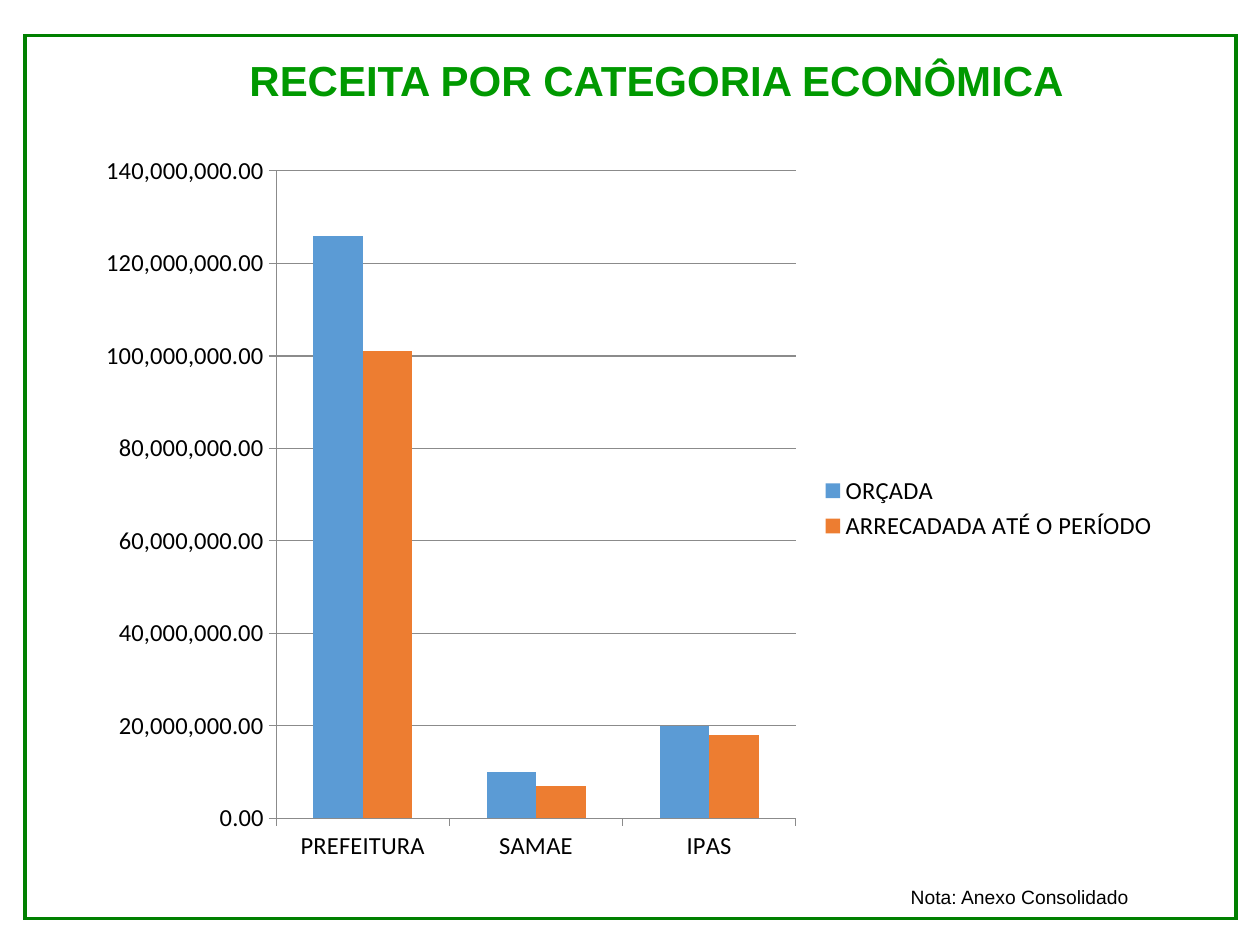
from dataclasses import dataclass

from lxml import etree
from pptx import Presentation
from pptx.chart.data import CategoryChartData
from pptx.dml.color import RGBColor
from pptx.enum.chart import XL_CHART_TYPE, XL_LEGEND_POSITION, XL_TICK_MARK
from pptx.enum.shapes import MSO_SHAPE
from pptx.enum.text import MSO_ANCHOR, PP_ALIGN
from pptx.oxml.ns import qn
from pptx.util import Inches, Pt

COLUMNS = XL_CHART_TYPE.COLUMN_CLUSTERED
LEGEND_RIGHT = XL_LEGEND_POSITION.RIGHT
TICK_OUTSIDE = XL_TICK_MARK.OUTSIDE
RECTANGLE = MSO_SHAPE.RECTANGLE
TOP, MIDDLE = MSO_ANCHOR.TOP, MSO_ANCHOR.MIDDLE
LEFT, CENTER = PP_ALIGN.LEFT, PP_ALIGN.CENTER


@dataclass(frozen=True)
class Theme:
    text_font: str = "Arial"
    chart_font: str = "Calibri"
    title_size: int = 24
    chart_size: int = 14
    note_size: int = 11
    title_color: str = "009900"
    frame_color: str = "008000"
    text_color: str = "000000"
    axis_color: str = "8B8B8B"
    series_colors: tuple = ("5B9BD5", "ED7D31")


class SlideBuilder:
    def __init__(self, slide, theme):
        self.slide = slide
        self.theme = theme

    def style_font(self, font, name, size, color, bold=False):
        font.name = name
        font.size = Pt(size)
        font.bold = bold
        font.color.rgb = RGBColor.from_string(color)

    def add_frame(self, left, top, width, height):
        shape = self.slide.shapes.add_shape(
            RECTANGLE, Inches(left), Inches(top), Inches(width), Inches(height))
        shape.shadow.inherit = False
        shape.fill.background()
        shape.line.color.rgb = RGBColor.from_string(self.theme.frame_color)
        shape.line.width = Pt(2)
        outline = shape.element.spPr.find(qn("a:ln"))
        etree.SubElement(outline, qn("a:miter"), lim="800000")

    def add_text(self, text, left, top, width, height, size, color,
                 bold=False, align=LEFT, anchor=TOP, indent=0.1, spacing=1.0):
        box = self.slide.shapes.add_textbox(
            Inches(left), Inches(top), Inches(width), Inches(height))
        text_frame = box.text_frame
        text_frame.word_wrap = True
        text_frame.vertical_anchor = anchor
        text_frame.margin_left = Inches(indent)
        text_frame.text = text
        paragraph = text_frame.paragraphs[0]
        paragraph.alignment = align
        paragraph.line_spacing = spacing
        self.style_font(paragraph.runs[0].font, self.theme.text_font, size, color, bold)

    def add_column_chart(self, categories, series_values, left, top, width, height):
        theme = self.theme
        chart_data = CategoryChartData(number_format="#,##0.00")
        chart_data.categories = categories
        for name, values in series_values.items():
            chart_data.add_series(name, values)
        chart = self.slide.shapes.add_chart(
            COLUMNS, Inches(left), Inches(top), Inches(width), Inches(height),
            chart_data).chart
        chart.has_title = False
        self.style_font(chart.font, theme.chart_font, theme.chart_size, theme.text_color)
        chart.has_legend = True
        chart.legend.position = LEGEND_RIGHT
        chart.legend.include_in_layout = False

        plot = chart.plots[0]
        plot.gap_width = 150
        plot.vary_by_categories = False
        for series, color in zip(plot.series, theme.series_colors):
            series.format.fill.solid()
            series.format.fill.fore_color.rgb = RGBColor.from_string(color)

        value_axis = chart.value_axis
        value_axis.has_major_gridlines = True
        value_axis.tick_labels.number_format = "#,##0.00"
        value_axis.tick_labels.number_format_is_linked = False
        for axis in (chart.category_axis, value_axis):
            axis.major_tick_mark = TICK_OUTSIDE
        for part in (chart.category_axis, value_axis, value_axis.major_gridlines):
            part.format.line.color.rgb = RGBColor.from_string(theme.axis_color)


def main():
    presentation = Presentation()
    presentation.slide_width = Inches(10)
    presentation.slide_height = Inches(7.5)
    theme = Theme()
    builder = SlideBuilder(
        presentation.slides.add_slide(presentation.slide_layouts[6]), theme)

    builder.add_text("RECEITA POR CATEGORIA ECONÔMICA", 0.67, 0.2, 8.62, 0.91,
                     theme.title_size, theme.title_color, bold=True,
                     align=CENTER, anchor=MIDDLE, indent=0.56, spacing=0.9)
    builder.add_frame(0.2, 0.28, 9.61, 7.01)
    builder.add_text("Nota: Anexo Consolidado", 7.13, 6.98, 2.6, 0.29,
                     theme.note_size, theme.text_color)
    builder.add_column_chart(
        ["PREFEITURA", "SAMAE", "IPAS"],
        {
            "ORÇADA": (126_000_000, 10_000_000, 20_000_000),
            "ARRECADADA ATÉ O PERÍODO": (101_000_000, 7_000_000, 18_000_000),
        },
        0.67, 1.12, 8.62, 5.83)
    presentation.save("out.pptx")


if __name__ == "__main__":
    main()
